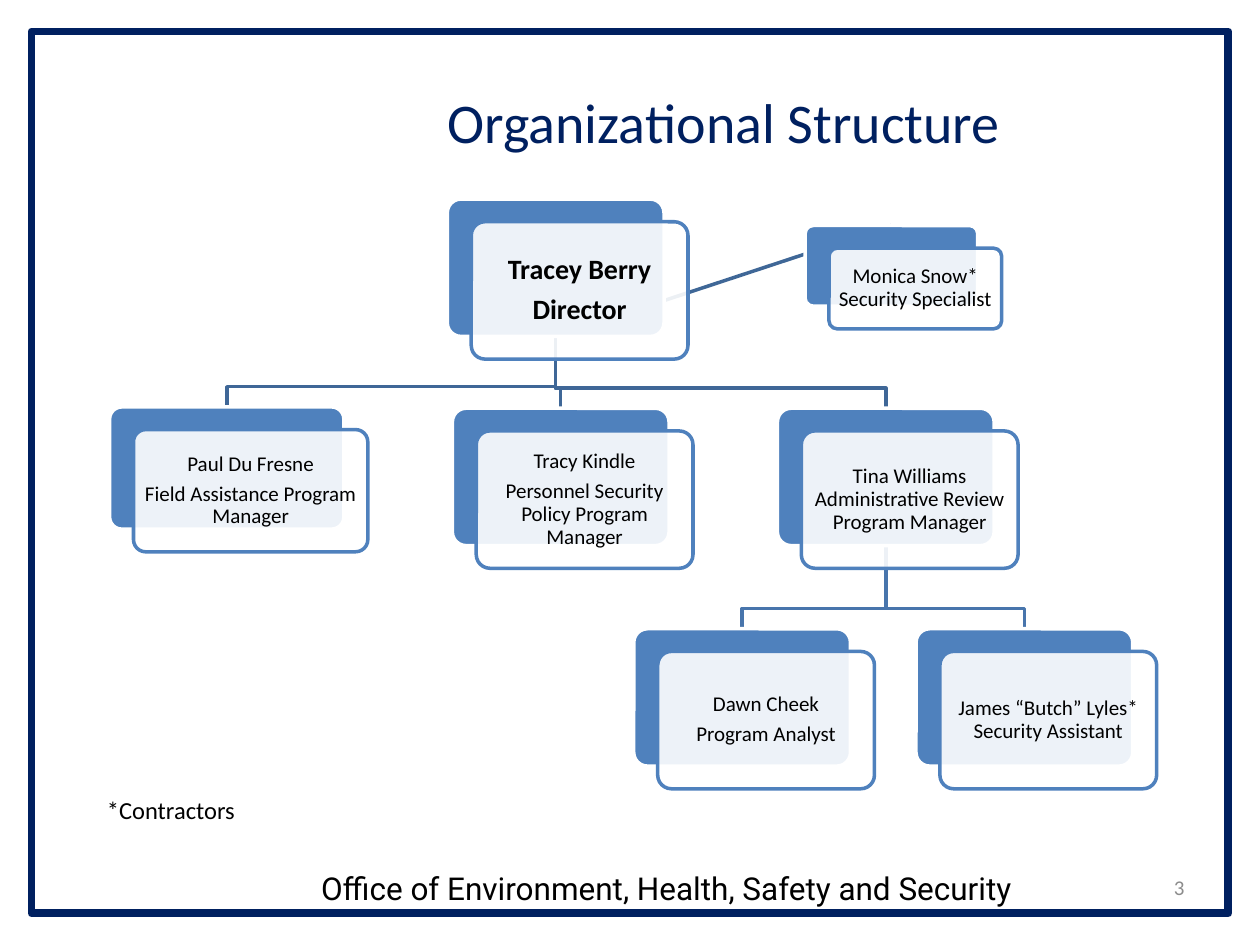
"""Build the organizational structure slide with its chart of staff cards."""
from dataclasses import dataclass

import lxml.etree
import pptx
import pptx.dml.color
import pptx.enum.shapes
import pptx.enum.text
import pptx.oxml.ns
import pptx.util

Inches = pptx.util.Inches
Pt = pptx.util.Pt
Color = pptx.dml.color.RGBColor.from_string
Align = pptx.enum.text.PP_ALIGN
Anchor = pptx.enum.text.MSO_ANCHOR
Shape = pptx.enum.shapes.MSO_SHAPE
qn = pptx.oxml.ns.qn


@dataclass(frozen=True)
class Theme:
    font: str = "Calibri"
    footer_font: str = "Roboto"
    navy: str = "002060"
    blue: str = "4F81BD"
    upper_link: str = "3F6797"
    lower_link: str = "4875AC"
    white: str = "FFFFFF"
    black: str = "000000"
    gray: str = "8C8C8C"
    title_size: int = 32
    footer_size: int = 18
    director_size: int = 16
    note_size: int = 14
    card_size: int = 12
    line_width: int = 2
    border_width: float = 4.5


theme = Theme()


def write(shape, lines, size, color, align, anchor, font=theme.font, bold=False):
    frame = shape.text_frame
    frame.word_wrap = True
    frame.vertical_anchor = anchor
    frame.text = "\n".join(lines)
    for paragraph in frame.paragraphs:
        paragraph.alignment = align
        paragraph.font.name = font
        paragraph.font.size = Pt(size)
        paragraph.font.bold = bold
        paragraph.font.color.rgb = Color(color)


def add_box(kind, left, top, width, height, line, line_width, fill=None):
    shape = slide.shapes.add_shape(kind, Inches(left), Inches(top), Inches(width), Inches(height))
    shape.shadow.inherit = False
    shape.line.color.rgb = Color(line)
    shape.line.width = Pt(line_width)
    if fill:
        shape.fill.solid()
        shape.fill.fore_color.rgb = Color(fill)
    else:
        shape.fill.background()
    return shape


presentation = pptx.Presentation()
presentation.slide_width = Inches(10)
presentation.slide_height = Inches(7.5)
slide = presentation.slides.add_slide(presentation.slide_layouts[6])

add_box(Shape.RECTANGLE, 0.25, 0.25, 9.5, 7, theme.navy, theme.border_width)

labels = [
    ("Office of Environment, Health, Safety and Security", (2.25, 6.85, 6.08, 0.4),
     theme.footer_size, theme.black, Align.CENTER, Anchor.TOP, theme.footer_font),
    ("Organizational Structure", (1.92, 0.6, 7.65, 0.72),
     theme.title_size, theme.navy, Align.CENTER, Anchor.MIDDLE, theme.font),
    ("*Contractors", (0.75, 6.26, 2, 0.34),
     theme.note_size, theme.black, Align.LEFT, Anchor.TOP, theme.font),
    ("3", (8.45, 6.84, 1.05, 0.4),
     theme.card_size, theme.gray, Align.RIGHT, Anchor.MIDDLE, theme.font),
]
for text, place, size, color, align, anchor, font in labels:
    label = slide.shapes.add_textbox(*map(Inches, place))
    write(label, [text], size, color, align, anchor, font)

cards = {
    "director": (3.55, 1.58, 1.72, 1.09, ["Tracey Berry", "Director"]),
    "specialist": (6.39, 1.79, 1.37, 0.64, ["Monica Snow* Security Specialist"]),
    "field": (0.87, 3.23, 1.86, 0.97, ["Paul Du Fresne", "Field Assistance Program Manager"]),
    "personnel": (3.59, 3.24, 1.72, 1.09,
                  ["Tracy Kindle", "Personnel Security Policy Program Manager"]),
    "review": (6.17, 3.24, 1.72, 1.09,
               ["Tina Williams Administrative Review Program Manager"]),
    "analyst": (5.03, 4.99, 1.72, 1.09, ["Dawn Cheek", "Program Analyst"]),
    "assistant": (7.27, 4.99, 1.72, 1.09, ["James “Butch” Lyles* Security Assistant"]),
}
links = [
    ("review", "assistant", theme.lower_link),
    ("review", "analyst", theme.lower_link),
    ("director", "review", theme.upper_link),
    ("director", "personnel", theme.upper_link),
    ("director", "field", theme.upper_link),
    ("director", "specialist", theme.upper_link),
]
elbow_rise = 0.16
card_offset = (0.19, 0.18)

for parent, child, color in links:
    left, top, width, height, _ = cards[parent]
    start = (Inches(left + width / 2), Inches(top + height))
    left, top, width, height, _ = cards[child]
    end = (Inches(left + width / 2), Inches(top))
    if child == "specialist":
        link = slide.shapes.add_connector(
            pptx.enum.shapes.MSO_CONNECTOR.STRAIGHT, *start, *end)
    else:
        elbow = Inches(top - elbow_rise)
        builder = slide.shapes.build_freeform(*start)
        builder.add_line_segments([(start[0], elbow), (end[0], elbow), end], close=False)
        link = builder.convert_to_shape()
        link.fill.background()
    link.line.color.rgb = Color(color)
    link.line.width = Pt(theme.line_width)
    lxml.etree.SubElement(link._element.spPr, qn("a:effectLst"))

for name, (left, top, width, height, lines) in cards.items():
    is_director = name == "director"
    back = add_box(Shape.ROUNDED_RECTANGLE, left, top, width, height,
                   theme.white, theme.line_width, theme.blue)
    front = add_box(Shape.ROUNDED_RECTANGLE, left + card_offset[0], top + card_offset[1],
                    width, height, theme.blue, theme.line_width, theme.white)
    back.adjustments[0] = front.adjustments[0] = 0.1
    front_color = front._element.spPr.find(qn("a:solidFill")).find(qn("a:srgbClr"))
    lxml.etree.SubElement(front_color, qn("a:alpha"), val="90000")

    size = theme.director_size if is_director else theme.card_size
    write(front, lines, size, theme.black, Align.CENTER, Anchor.MIDDLE, bold=is_director)
    frame = front.text_frame
    margin = Inches(0.07 if is_director else 0.05)
    frame.margin_left = frame.margin_right = margin
    frame.margin_top = frame.margin_bottom = margin
    for paragraph in frame.paragraphs:
        paragraph.line_spacing = 0.9
        paragraph.space_after = Pt(round(size * 0.35, 1))

presentation.save("out.pptx")
